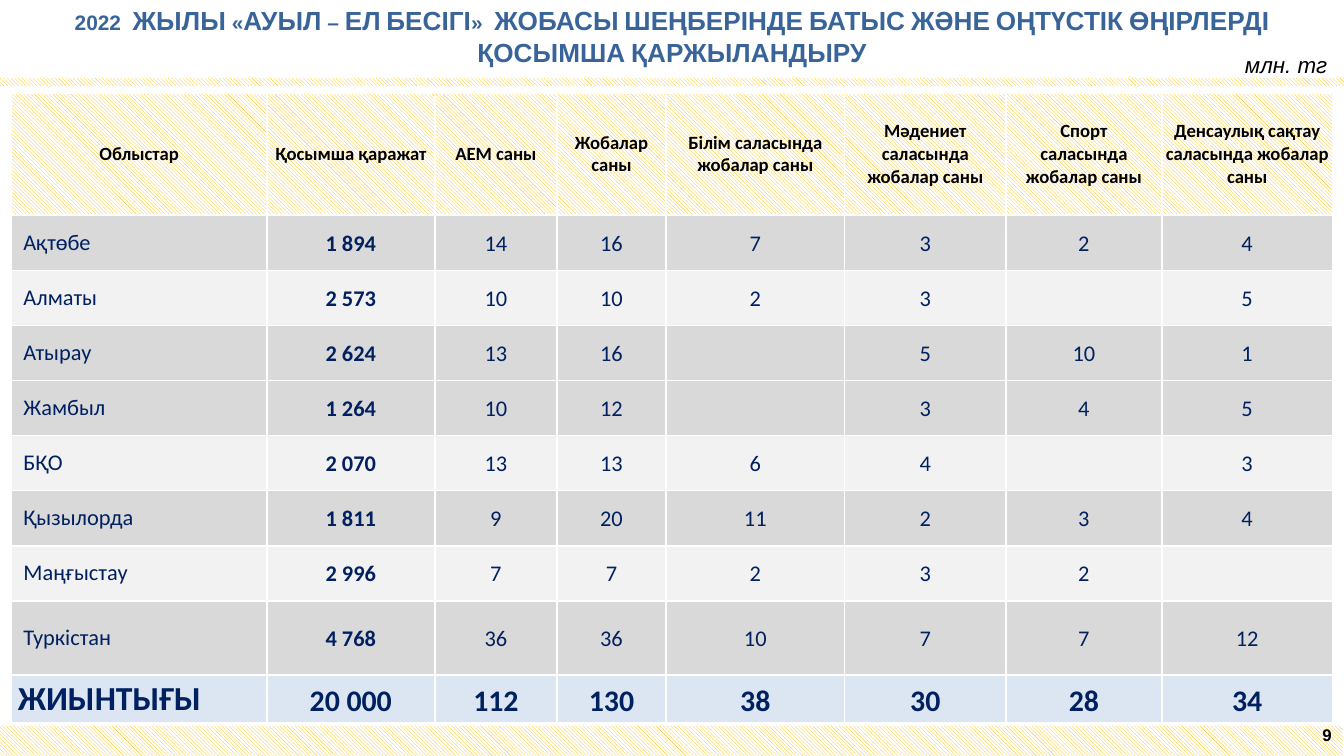
"""Build a slide with a table of extra rural project funding by region."""
import dataclasses
import typing

import pptx
import pptx.dml.color
import pptx.enum.dml
import pptx.enum.shapes
import pptx.enum.text
import pptx.oxml
import pptx.oxml.ns
import pptx.util

WIDTH = 10
HEIGHT = WIDTH * 9 / 16
COLORS = {
    "title": "396499", "ink": "000000", "navy": "002060", "amber": "FFC000",
    "white": "FFFFFF", "dark": "D9D9D9", "light": "F2F2F2", "total": "DCE6F2",
}
ALIGN = pptx.enum.text.PP_ALIGN
MIDDLE = pptx.enum.text.MSO_ANCHOR.MIDDLE
COLUMNS = (1.9, 1.25, 0.91, 0.81, 1.33, 1.2, 1.16, 1.27)
HEADINGS = (
    "Облыстар", "Қосымша қаражат", "АЕМ саны", "Жобалар саны",
    "Білім саласында жобалар саны", "Мәдениет саласында жобалар саны",
    "Спорт\nсаласында жобалар саны", "Денсаулық сақтау саласында жобалар саны",
)


@dataclasses.dataclass(frozen=True)
class Area:
    left: float
    top: float
    width: float
    height: float

    def lengths(self) -> tuple[int, ...]:
        shares = (self.left, self.top, self.width, self.height)
        sides = (WIDTH, HEIGHT, WIDTH, HEIGHT)
        return tuple(pptx.util.Inches(share / 100 * side) for share, side in zip(shares, sides))


@dataclasses.dataclass(frozen=True)
class Row:
    values: tuple[str, ...]
    fill: str
    height: float = 0.41
    size: float = 12
    label_size: float = 12
    indent: float = 0.09
    inset: float = 0.01
    color: str = "navy"
    bold_columns: tuple[int, ...] = (1,)
    label_align: typing.Any = ALIGN.LEFT


EVERY = tuple(range(len(COLUMNS)))
ROWS = (
    Row(HEADINGS, "pattern", height=0.91, size=10, label_size=10, indent=0, inset=0,
        color="ink", bold_columns=EVERY, label_align=ALIGN.CENTER),
    Row(("Ақтөбе", "1 894", "14", "16", "7", "3", "2", "4"), "dark"),
    Row(("Алматы", "2 573", "10", "10", "2", "3", "", "5"), "light"),
    Row(("Атырау", "2 624", "13", "16", "", "5", "10", "1"), "dark"),
    Row(("Жамбыл", "1 264", "10", "12", "", "3", "4", "5"), "dark"),
    Row(("БҚО", "2 070", "13", "13", "6", "4", "", "3"), "light"),
    Row(("Қызылорда", "1 811", "9", "20", "11", "2", "3", "4"), "dark"),
    Row(("Маңғыстау", "2 996", "7", "7", "2", "3", "2", ""), "light"),
    Row(("Туркістан", "4 768", "36", "36", "10", "7", "7", "12"), "dark", height=0.55),
    Row(("ЖИЫНТЫҒЫ", "20 000", "112", "130", "38", "30", "28", "34"), "total", height=0.36,
        size=16, label_size=18, indent=0.05, inset=0.04, bold_columns=EVERY),
)


def rgb(name: str) -> pptx.dml.color.RGBColor:
    return pptx.dml.color.RGBColor.from_string(COLORS[name])


def write(frame, text: str, *, size: float, color: str = "ink", font: str = "Arial",
          bold: bool = False, italic: bool = False, small_caps: bool = False,
          align=ALIGN.CENTER) -> None:
    for index, line in enumerate(text.split("\n")):
        para = frame.add_paragraph() if index else frame.paragraphs[0]
        para.alignment = align
        if not line:
            continue
        span = para.add_run()
        span.text = line
        span.font.name = font
        span.font.size = pptx.util.Pt(size)
        span.font.bold, span.font.italic = bold, italic
        span.font.color.rgb = rgb(color)
        if small_caps:
            span.font._element.set("cap", "small")


def paint(fill, color: str) -> None:
    if color == "pattern":
        fill.patterned()
        fill.pattern = pptx.enum.dml.MSO_PATTERN.LIGHT_DOWNWARD_DIAGONAL
        fill.fore_color.rgb, fill.back_color.rgb = rgb("amber"), rgb("white")
    else:
        fill.solid()
        fill.fore_color.rgb = rgb(color)


def add_borders(cell) -> None:
    properties = cell._tc.get_or_add_tcPr()
    for index, side in enumerate("LRTB"):
        properties.insert(index, pptx.oxml.parse_xml(
            f'<a:ln{side} {pptx.oxml.ns.nsdecls("a")} w="12700"><a:solidFill>'
            f'<a:srgbClr val="{COLORS["white"]}"/></a:solidFill></a:ln{side}>'))


def fill_cell(cell, row: Row, column: int) -> None:
    is_label = column == 0
    inset = pptx.util.Inches(0 if is_label else row.inset)
    cell.margin_left = pptx.util.Inches(row.indent) if is_label else inset
    cell.margin_right = cell.margin_top = inset
    cell.margin_bottom = 0
    cell.vertical_anchor = MIDDLE
    paint(cell.fill, row.fill)
    add_borders(cell)
    write(cell.text_frame, row.values[column], font="Calibri", color=row.color,
          size=row.label_size if is_label else row.size,
          bold=column in row.bold_columns,
          align=row.label_align if is_label else ALIGN.CENTER)


def add_funding_table(page, area: Area) -> None:
    table = page.shapes.add_table(len(ROWS), len(COLUMNS), *area.lengths()).table
    for column, width in zip(table.columns, COLUMNS):
        column.width = pptx.util.Inches(width)
    for index, row in enumerate(ROWS):
        table.rows[index].height = pptx.util.Inches(row.height)
        for column in EVERY:
            fill_cell(table.cell(index, column), row, column)


def add_band(page, area: Area) -> None:
    band = page.shapes.add_shape(pptx.enum.shapes.MSO_SHAPE.RECTANGLE, *area.lengths())
    band.shadow.inherit = False
    band.line.fill.background()
    paint(band.fill, "pattern")


def add_note(page, area: Area, text: str, **style) -> None:
    box = page.shapes.add_textbox(*area.lengths())
    box.text_frame.word_wrap = False
    write(box.text_frame, text, **style)


def set_title(page, area: Area, text: str) -> None:
    title = page.shapes.title
    title.left, title.top, title.width, title.height = area.lengths()
    frame = title.text_frame
    frame.word_wrap = True
    frame.auto_size = pptx.enum.text.MSO_AUTO_SIZE.NONE
    frame.vertical_anchor = MIDDLE
    write(frame, text, size=14, color="title", bold=True, small_caps=True)


def main() -> None:
    deck = pptx.Presentation()
    deck.slide_width, deck.slide_height = pptx.util.Inches(WIDTH), pptx.util.Inches(HEIGHT)
    page = deck.slides.add_slide(deck.slide_layouts[5])
    add_funding_table(page, Area(0.85, 12.3, 98.3, 83.4))
    set_title(page, Area(0, -0.3, 100, 10.14),
              "2022  ЖЫЛЫ «АУЫЛ – ЕЛ БЕСІГІ»  ЖОБАСЫ ШЕҢБЕРІНДЕ БАТЫС ЖӘНЕ "
              "ОҢТҮСТІК ӨҢІРЛЕРДІ ҚОСЫМША ҚАРЖЫЛАНДЫРУ")
    for area in (Area(-0.1, 96, 100, 4), Area(0, 10.32, 100, 1.07)):
        add_band(page, area)
    add_note(page, Area(91.6, 5.87, 8.2, 5.34), "млн. тг", size=12, italic=True)
    add_note(page, Area(97.4, 95, 2.7, 4.45), "9", size=9, bold=True, align=ALIGN.LEFT)
    deck.save("out.pptx")


if __name__ == "__main__":
    main()
